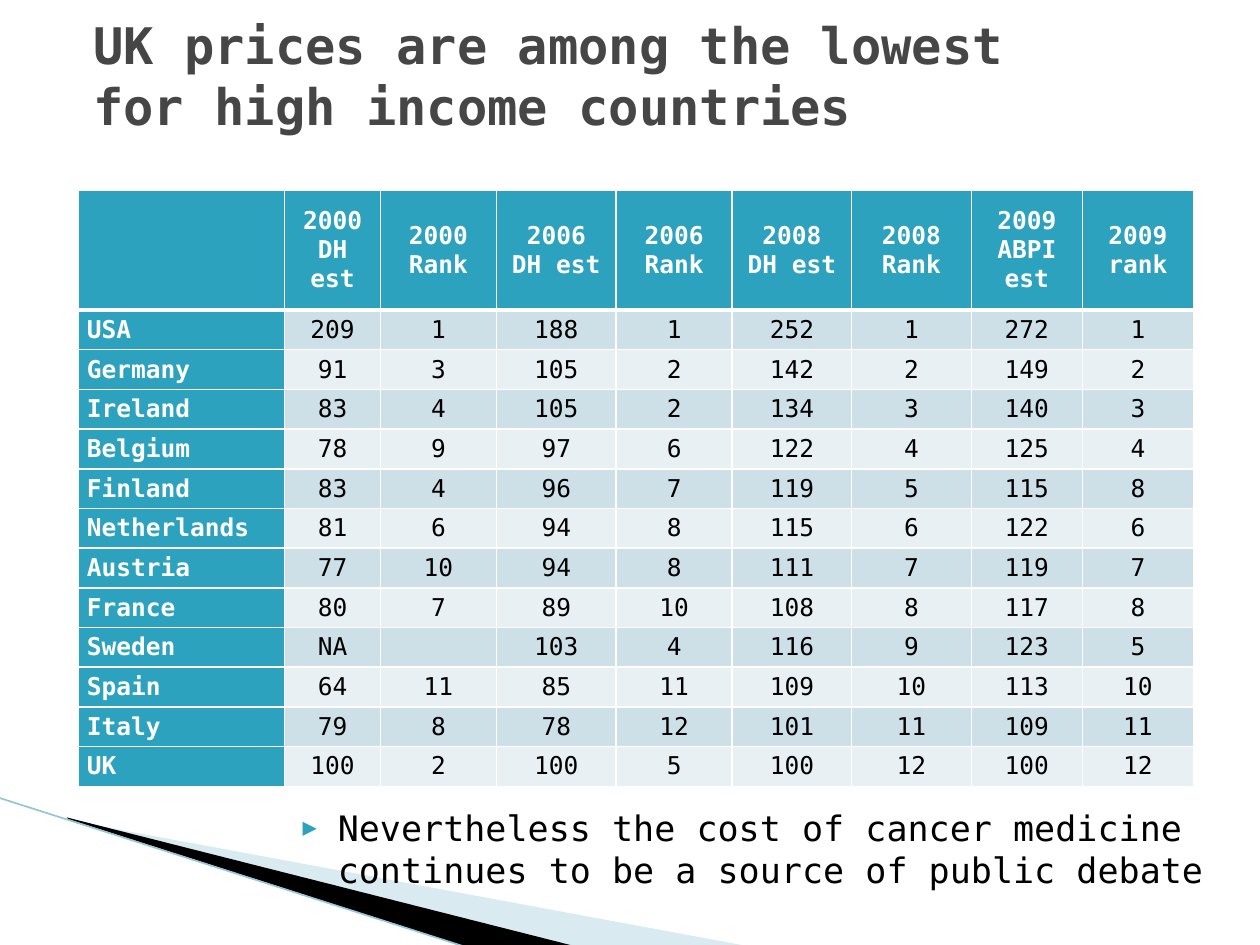
import pptx
import pptx.dml.color
import pptx.enum.shapes
import pptx.enum.text
import pptx.oxml
import pptx.oxml.ns
import pptx.util

Cm = pptx.util.Cm
Pt = pptx.util.Pt
RGB = pptx.dml.color.RGBColor
Align = pptx.enum.text.PP_ALIGN
Anchor = pptx.enum.text.MSO_ANCHOR

WHITE = RGB(0xFF, 0xFF, 0xFF)
BLACK = RGB(0, 0, 0)
GREY = RGB(0x46, 0x46, 0x46)
TEAL = RGB(0x2D, 0xA2, 0xBF)
PALE = RGB(0xA0, 0xCB, 0xDC)
EDGE = RGB(0x97, 0xC5, 0xD8)
BANDS = (RGB(0xCD, 0xE0, 0xE8), RGB(0xE8, 0xF0, 0xF4))

WIDTHS = (4.17, 1.93, 2.34, 2.41, 2.34, 2.41, 2.41, 2.24, 2.24)
HEIGHTS = (2.41,) + (0.8,) * 12
ROWS = [line.split(",") for line in """\
,2000 DH est,2000 Rank,2006 DH est,2006 Rank,2008 DH est,2008 Rank,2009 ABPI est,2009 rank
USA,209,1,188,1,252,1,272,1
Germany,91,3,105,2,142,2,149,2
Ireland,83,4,105,2,134,3,140,3
Belgium,78,9,97,6,122,4,125,4
Finland,83,4,96,7,119,5,115,8
Netherlands,81,6,94,8,115,6,122,6
Austria,77,10,94,8,111,7,119,7
France,80,7,89,10,108,8,117,8
Sweden,NA,,103,4,116,9,123,5
Spain,64,11,85,11,109,10,113,10
Italy,79,8,78,12,101,11,109,11
UK,100,2,100,5,100,12,100,12""".splitlines()]


def add_xml(parent, tag, body="", **attrs):
    pairs = "".join(f' {key}="{val}"' for key, val in attrs.items())
    space = pptx.oxml.ns.nsdecls("a")
    node = pptx.oxml.parse_xml(f"<a:{tag} {space}{pairs}>{body}</a:{tag}>")
    parent.append(node)


class Deck:
    face = "DejaVu Sans Mono"

    def __init__(self):
        self.show = pptx.Presentation()
        self.show.slide_width = Cm(25.4)
        self.show.slide_height = Cm(19.05)
        self.slide = self.show.slides.add_slide(self.show.slide_layouts[6])

    def style(self, para, size, color, bold=False):
        for run in para.runs:
            run.font.name = self.face
            run.font.size = Pt(size)
            run.font.color.rgb = color
            run.font.bold = bold

    def text(self, box, words, size, color, bold=False, anchor=Anchor.TOP):
        frame = self.slide.shapes.add_textbox(*map(Cm, box)).text_frame
        frame.word_wrap = True
        frame.vertical_anchor = anchor
        frame.text = words
        para = frame.paragraphs[0]
        self.style(para, size, color, bold)
        return para

    def bullet(self, box, words, size, color, mark):
        para = self.text(box, words, size, color)
        props = para._p.get_or_add_pPr()
        props.set("marL", str(Cm(1.02)))
        props.set("indent", str(-Cm(0.71)))
        add_xml(props, "buClr", f'<a:srgbClr val="{mark}"/>')
        add_xml(props, "buSzPct", val=68000)
        add_xml(props, "buFont", typeface=self.face)
        add_xml(props, "buChar", char="▶")

    def wedge(self, points, color, alpha=None):
        spots = [(Cm(x), Cm(y)) for x, y in points]
        build = self.slide.shapes.build_freeform(*spots[0])
        build.add_line_segments(spots[1:], close=True)
        shape = build.convert_to_shape()
        shape.shadow.inherit = False
        shape.fill.solid()
        shape.fill.fore_color.rgb = color
        shape.line.fill.background()
        if alpha:
            tint = shape._element.spPr.find(".//" + pptx.oxml.ns.qn("a:srgbClr"))
            add_xml(tint, "alpha", val=alpha * 1000)

    def line(self, ends, color, width):
        kind = pptx.enum.shapes.MSO_CONNECTOR.STRAIGHT
        rule = self.slide.shapes.add_connector(kind, *map(Cm, ends))
        rule.line.color.rgb = color
        rule.line.width = Pt(width)
        add_xml(rule._element.spPr, "effectLst")

    def cell(self, cell, words, fill, color, bold, align, base):
        cell.text = words
        cell.vertical_anchor = Anchor.MIDDLE
        cell.margin_left = cell.margin_right = Cm(0.18)
        cell.margin_top = cell.margin_bottom = 0
        para = cell.text_frame.paragraphs[0]
        para.alignment = align
        self.style(para, 14, color, bold)
        paint = f'<a:solidFill><a:srgbClr val="{WHITE}"/></a:solidFill>'
        for side, width in zip("LRTB", (1, 1, 1, base)):
            add_xml(cell._tc.get_or_add_tcPr(), "ln" + side, paint, w=Pt(width))
        cell.fill.solid()
        cell.fill.fore_color.rgb = fill

    def table(self, left, top, widths, heights, rows):
        size = (left, top, sum(widths), sum(heights))
        grid = self.slide.shapes.add_table(
            len(rows), len(widths), *map(Cm, size)).table
        grid.horz_banding = False
        for col, width in zip(grid.columns, widths):
            col.width = Cm(width)
        for r, (row, height) in enumerate(zip(rows, heights)):
            grid.rows[r].height = Cm(height)
            for c, words in enumerate(row):
                head = r == 0 or c == 0
                self.cell(
                    grid.cell(r, c), words,
                    fill=TEAL if head else BANDS[(r - 1) % 2],
                    color=WHITE if head else BLACK,
                    bold=head,
                    align=Align.CENTER if c else Align.LEFT,
                    base=3 if r == 0 else 1)


def main():
    deck = Deck()
    deck.wedge([(1.4, 16.54), (15.11, 19.08), (11.58, 19.08), (1.4, 16.51)],
               PALE, 40)
    deck.wedge([(1.35, 16.48), (11.61, 19.08), (9.45, 19.1), (1.37, 16.51)],
               BLACK)
    deck.line((-0.03, 16.08, 9.42, 19.1), EDGE, 0.95)
    deck.text((1.63, 0.61, 19.96, 1.8),
              "UK prices are among the lowest for high income countries",
              28.8, GREY, True, Anchor.MIDDLE)
    deck.table(1.57, 3.84, WIDTHS, HEIGHTS, ROWS)
    deck.bullet((5.54, 16.13, 19.86, 1.78),
                "Nevertheless the cost of cancer medicine continues "
                "to be a source of public debate", 20, BLACK, TEAL)
    deck.show.save("out.pptx")


if __name__ == "__main__":
    main()
